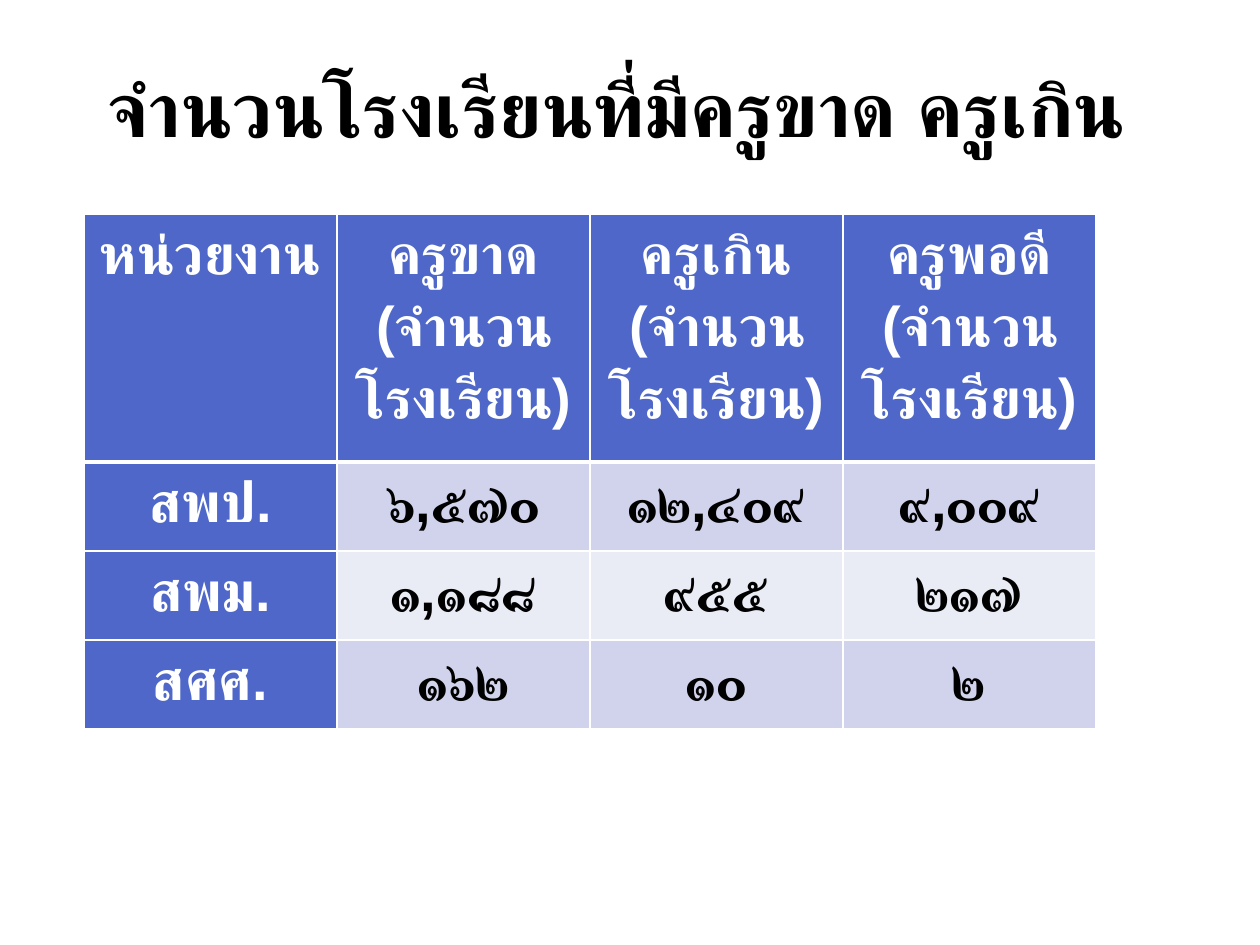
from dataclasses import dataclass

from lxml.etree import SubElement
from pptx import Presentation
from pptx.dml.color import RGBColor
from pptx.enum.text import MSO_ANCHOR, PP_ALIGN
from pptx.oxml.ns import qn
from pptx.util import Pt

PX = 914400 / 126


def px(n):
    return round(n * PX)


@dataclass(frozen=True)
class Theme:
    font: str = "Arial"
    title_size: int = 44
    table_size: int = 32
    ink: str = "000000"
    white: str = "FFFFFF"
    accent: str = "4E67C8"
    bands: tuple = ("D0D3EB", "E9EBF5")
    line_spacing: float = 1.15
    border: int = 1
    header_border: int = 3


class Deck:
    """Draws styled elements on the current slide."""

    def __init__(self, prs, theme):
        self.prs, self.theme, self.s = prs, theme, None

    def add_slide(self):
        self.s = self.prs.slides.add_slide(self.prs.slide_layouts[6])

    def add_lines(self, tf, lines, size, color, spacing=None):
        tf.word_wrap = True
        for i, line in enumerate(lines):
            p = tf.add_paragraph() if i else tf.paragraphs[0]
            p.alignment = PP_ALIGN.CENTER
            p.line_spacing = spacing
            r = p.add_run()
            r.text = line
            r.font.name = self.theme.font
            r.font.size = Pt(size)
            r.font.bold = True
            r.font.color.rgb = RGBColor.from_string(color)
            SubElement(r._r.get_or_add_rPr(), qn("a:cs"), typeface=self.theme.font)

    def title(self, text, x, y, w, h):
        sp = self.s.shapes.add_textbox(px(x), px(y), px(w), px(h))
        tf = sp.text_frame
        tf.vertical_anchor = MSO_ANCHOR.MIDDLE
        self.add_lines(tf, [text], self.theme.title_size, self.theme.ink)

    def borders(self, cell, top, bottom):
        tc_pr = cell._tc.get_or_add_tcPr()
        side = self.theme.border
        for tag, width in (("lnL", side), ("lnR", side), ("lnT", top), ("lnB", bottom)):
            ln = SubElement(tc_pr, qn(f"a:{tag}"), w=str(int(Pt(width))))
            fill = SubElement(ln, qn("a:solidFill"))
            SubElement(fill, qn("a:srgbClr"), val=self.theme.white)

    def table(self, rows, x, y, col_w, heights):
        t = self.theme
        n = len(rows[0])
        frame = self.s.shapes.add_table(
            len(rows), n, px(x), px(y), px(col_w * n), px(sum(heights)))
        tbl = frame.table
        for col in tbl.columns:
            col.width = px(col_w)
        for i, (row, height) in enumerate(zip(rows, heights)):
            tbl.rows[i].height = px(height)
            for j, text in enumerate(row):
                cell = tbl.cell(i, j)
                cell.margin_left = cell.margin_right = px(9)
                cell.margin_top = cell.margin_bottom = 0
                self.borders(cell,
                             t.header_border if i == 1 else t.border,
                             t.header_border if i == 0 else t.border)
                heading = i == 0 or j == 0
                cell.fill.solid()
                cell.fill.fore_color.rgb = RGBColor.from_string(
                    t.accent if heading else t.bands[(i - 1) % 2])
                self.add_lines(cell.text_frame, text.split("\n"), t.table_size,
                               t.white if heading else t.ink, t.line_spacing)


def main():
    prs = Presentation()
    prs.slide_width, prs.slide_height = px(1260), px(945)
    deck = Deck(prs, Theme())
    deck.add_slide()
    deck.title("จำนวนโรงเรียนที่มีครูขาด ครูเกิน", 25, 37, 1183, 139)
    unit = "(จำนวนโรงเรียน)"
    header = ["หน่วยงาน"] + [f"{name}\n{unit}" for name in ("ครูขาด", "ครูเกิน", "ครูพอดี")]
    rows = [
        header,
        ["สพป.", "๖,๕๗๐", "๑๒,๔๐๙", "๙,๐๐๙"],
        ["สพม.", "๑,๑๘๘", "๙๕๕", "๒๑๗"],
        ["สศศ.", "๑๖๒", "๑๐", "๒"],
    ]
    deck.table(rows, 84, 214, 253, [248, 89, 89, 89])
    prs.save("out.pptx")


if __name__ == "__main__":
    main()
